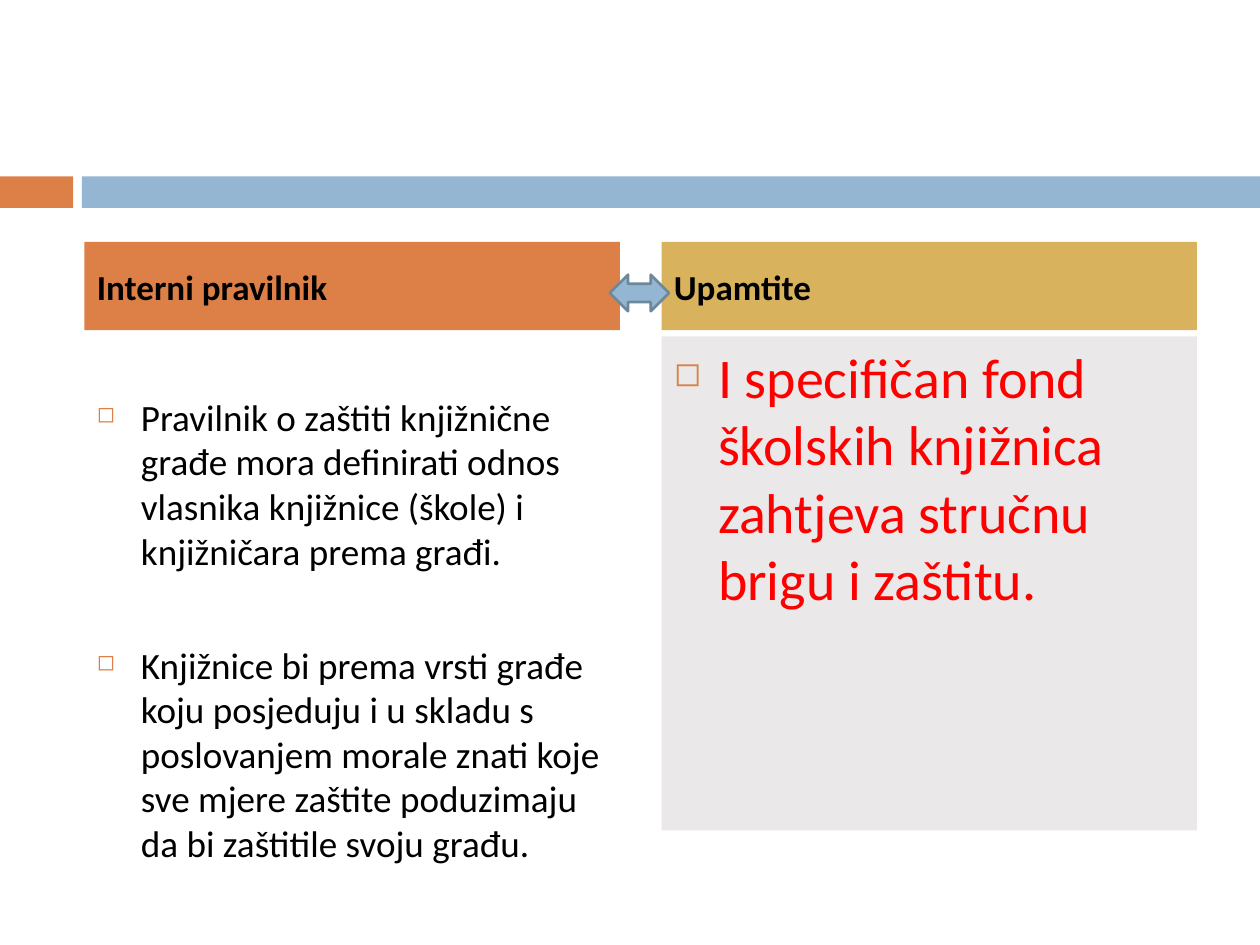
import pptx
import pptx.util
import pptx.dml.color
import pptx.enum.shapes
import pptx.enum.text
import pptx.oxml.ns
import lxml.etree

Inches, Pt = pptx.util.Inches, pptx.util.Pt
RGB = pptx.dml.color.RGBColor
SHAPE = pptx.enum.shapes.MSO_SHAPE
ANCHOR = pptx.enum.text.MSO_ANCHOR
ALIGN = pptx.enum.text.PP_ALIGN

ORANGE = RGB(0xDD, 0x80, 0x47)
BLUE = RGB(0x94, 0xB6, 0xD2)
DARK_BLUE = RGB(0x6D, 0x87, 0x9B)
GOLD = RGB(0xD8, 0xB2, 0x5C)
GRAY = RGB(0xEA, 0xE8, 0xE8)
RED = RGB(0xFF, 0, 0)
BLACK = RGB(0, 0, 0)

COL_W, HEAD_TOP, HEAD_H = 4.25, 1.92, 0.7
INDENT = 0.35

BANDS = [(0, 0.58, ORANGE), (0.65, 9.35, BLUE)]
COLUMNS = [
    {
        "left": 0.67, "title": "Interni pravilnik", "head_fill": ORANGE,
        "top": 3.08, "height": 3.98, "fill": None, "size": 21.2, "color": BLACK,
        "gap": 39.7,
        "items": [
            "Pravilnik o zaštiti knjižnične građe mora definirati odnos vlasnika "
            "knjižnice (škole) i knjižničara prema građi.",
            "Knjižnice bi prema vrsti građe koju posjeduju i u skladu s poslovanjem "
            "morale znati koje sve mjere zaštite poduzimaju da bi zaštitile svoju građu.",
        ],
    },
    {
        "left": 5.25, "title": "Upamtite", "head_fill": GOLD,
        "top": 2.67, "height": 3.92, "fill": GRAY, "size": 32, "color": RED,
        "gap": 7,
        "items": ["I specifičan fond školskih knjižnica zahtjeva stručnu brigu i zaštitu."],
    },
]


def add_box(s, box, fill, kind=SHAPE.RECTANGLE):
    sp = s.shapes.add_shape(kind, *map(Inches, box))
    sp.shadow.inherit = False
    sp.line.fill.background()
    if fill is None:
        sp.fill.background()
    else:
        sp.fill.solid()
        sp.fill.fore_color.rgb = fill
    return sp


def add_bullet(p):
    pPr = p._p.get_or_add_pPr()
    pPr.set("marL", str(Inches(INDENT)))
    pPr.set("indent", str(-Inches(INDENT)))
    qn = pptx.oxml.ns.qn
    color = lxml.etree.SubElement(pPr, qn("a:buClr"))
    lxml.etree.SubElement(color, qn("a:srgbClr"), val=str(ORANGE))
    lxml.etree.SubElement(pPr, qn("a:buSzPct"), val="60000")
    lxml.etree.SubElement(pPr, qn("a:buChar"), char="◻")


def write(sp, items, anchor, gap, color, font, bullets=False):
    tf = sp.text_frame
    tf.word_wrap = True
    tf.vertical_anchor = anchor
    for i, text in enumerate(items):
        p = tf.paragraphs[0] if i == 0 else tf.add_paragraph()
        p.alignment = ALIGN.LEFT
        p.space_before = Pt(gap if i else 7)
        if bullets:
            add_bullet(p)
        r = p.add_run()
        r.text = text
        for name, value in font.items():
            setattr(r.font, name, value)
        r.font.color.rgb = color


def main():
    prs = pptx.Presentation()
    prs.slide_width, prs.slide_height = Inches(10), Inches(7.5)
    s = prs.slides.add_slide(prs.slide_layouts[6])

    for left, width, fill in BANDS:
        add_box(s, (left, 1.4, width, 0.25), fill)

    for col in COLUMNS:
        body = add_box(s, (col["left"], col["top"], COL_W, col["height"]), col["fill"])
        write(body, col["items"], ANCHOR.TOP, col["gap"], col["color"],
              {"name": "Calibri", "size": Pt(col["size"])}, bullets=True)
        head = add_box(s, (col["left"], HEAD_TOP, COL_W, HEAD_H), col["head_fill"])
        write(head, [col["title"]], ANCHOR.MIDDLE, 7, BLACK,
              {"name": "Calibri", "size": Pt(20), "bold": True})

    arrow = add_box(s, (4.84, 2.18, 0.47, 0.29), BLUE, SHAPE.LEFT_RIGHT_ARROW)
    arrow.line.color.rgb = DARK_BLUE
    arrow.line.width = Pt(1.5)

    prs.save("out.pptx")


if __name__ == "__main__":
    main()
